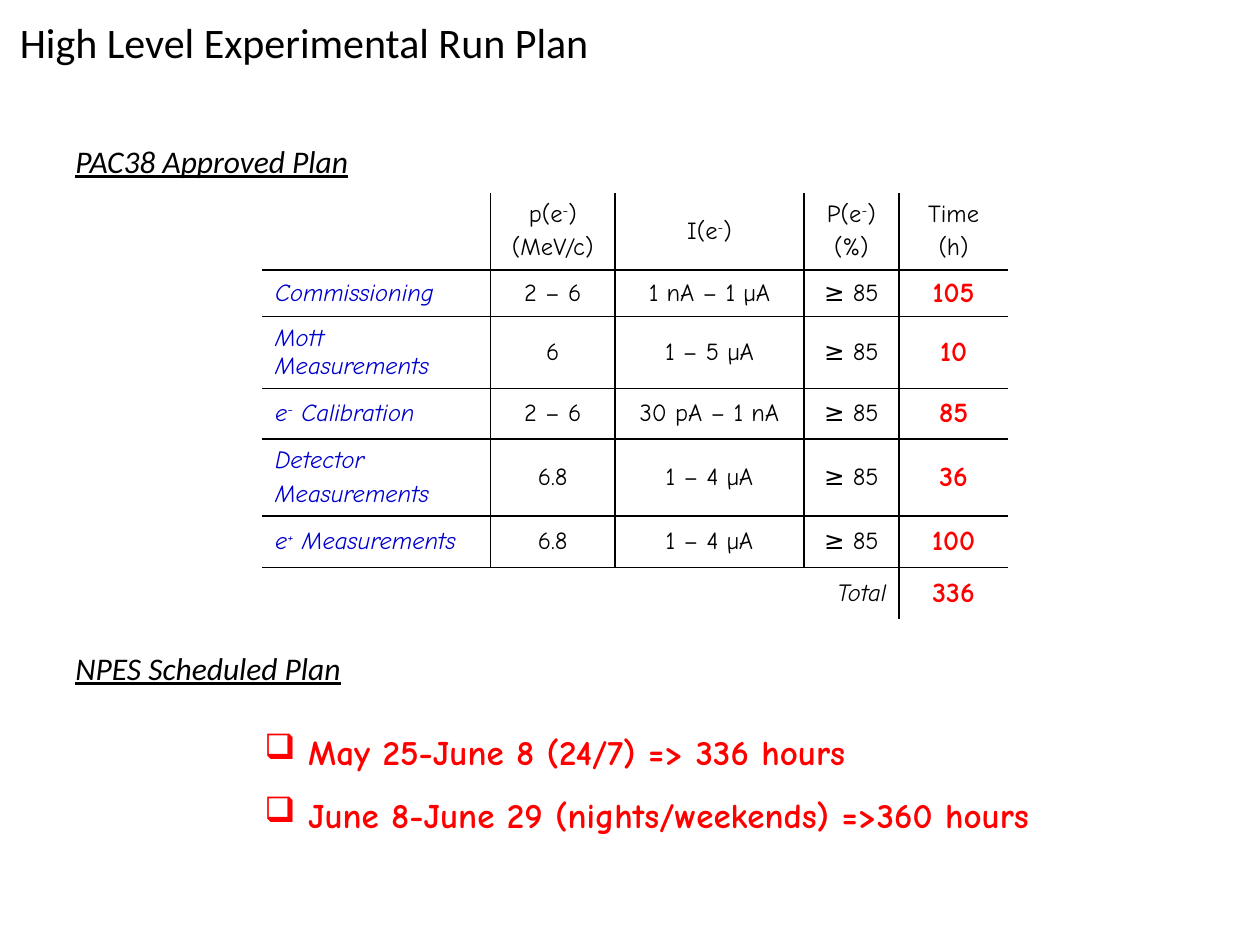
from dataclasses import dataclass

from lxml import etree
from pptx import Presentation
from pptx.dml.color import RGBColor
from pptx.enum.text import MSO_ANCHOR, MSO_AUTO_SIZE, PP_ALIGN
from pptx.oxml.ns import qn
from pptx.util import Cm, Pt

BLACK = RGBColor(0x00, 0x00, 0x00)
BLUE = RGBColor(0x00, 0x00, 0xCC)
RED = RGBColor(0xFF, 0x00, 0x00)
LEFT, CENTER, RIGHT = PP_ALIGN.LEFT, PP_ALIGN.CENTER, PP_ALIGN.RIGHT
MIDDLE = MSO_ANCHOR.MIDDLE
FIT_SHAPE = MSO_AUTO_SIZE.SHAPE_TO_FIT_TEXT


@dataclass(frozen=True)
class TextStyle:
    font: str
    size: int
    color: RGBColor = BLACK
    bold: bool = False
    italic: bool = False
    underline: bool = False
    align: PP_ALIGN = LEFT


@dataclass(frozen=True)
class Label:
    text: str
    left: float
    top: float
    width: float
    height: float
    style: TextStyle


TITLE = TextStyle("Calibri", 24)
HEADING = TextStyle("Calibri", 18, italic=True, underline=True)
VALUE = TextStyle("Comic Neue", 14, align=CENTER)
ACTIVITY = TextStyle("Comic Neue", 14, BLUE, italic=True)
HOURS = TextStyle("Comic Neue", 16, RED, bold=True, align=CENTER)
TOTAL = TextStyle("Comic Neue", 14, italic=True, align=RIGHT)
SCHEDULE = TextStyle("Comic Neue", 20, RED, bold=True)

LABELS = [
    Label("High Level Experimental Run Plan", 0.15, 0.2, 12.09, 1.3, TITLE),
    Label("PAC38 Approved Plan", 1.27, 2.74, 6.1, 1.02, HEADING),
    Label("NPES Scheduled Plan", 1.27, 12.95, 5.97, 1.02, HEADING),
]

# Text between carets is superscript; a line break starts a new paragraph
RUN_PLAN = [
    ["", "p(e^-^)\n(MeV/c)", "I(e^-^)", "P(e^-^)\n(%)", "Time\n(h)"],
    ["Commissioning", "2 – 6", "1 nA – 1 µA", "≥ 85", "105"],
    ["Mott Measurements", "6", "1 – 5 µA", "≥ 85", "10"],
    ["e^-^ Calibration", "2 – 6", "30 pA – 1 nA", "≥ 85", "85"],
    ["Detector\nMeasurements", "6.8", "1 – 4 µA", "≥ 85", "36"],
    ["e^+^ Measurements", "6.8", "1 – 4 µA", "≥ 85", "100"],
    ["Total", "", "", "", "336"],
]
COLUMN_WIDTHS = [4.6, 2.51, 3.81, 1.91, 2.21]
ROW_HEIGHTS = [1.55, 0.94, 1.45, 1.02, 1.55, 1.04, 1.04]
LAST_ROW, LAST_COLUMN = len(ROW_HEIGHTS) - 1, len(COLUMN_WIDTHS) - 1

SCHEDULE_LINES = [
    " May 25-June 8 (24/7) => 336 hours",
    " June 8-June 29 (nights/weekends) =>360 hours",
]


def write_paragraph(paragraph, text: str, style: TextStyle) -> None:
    paragraph.alignment = style.align
    for index, part in enumerate(text.split("^")):
        run = paragraph.add_run()
        run.text = part
        font = run.font
        font.name, font.size = style.font, Pt(style.size)
        font.bold, font.italic = style.bold, style.italic
        font.underline = style.underline
        font.color.rgb = style.color
        if index % 2:
            run._r.get_or_add_rPr().set("baseline", "30000")


def add_label(slide, label: Label) -> None:
    box = slide.shapes.add_textbox(
        Cm(label.left), Cm(label.top), Cm(label.width), Cm(label.height))
    box.text_frame.word_wrap = False
    box.text_frame.auto_size = FIT_SHAPE
    write_paragraph(box.text_frame.paragraphs[0], label.text, label.style)


def set_borders(cell, visible: dict[str, bool]) -> None:
    properties = cell._tc.get_or_add_tcPr()
    for side, shown in visible.items():
        line = etree.SubElement(properties, qn(f"a:ln{side}"), w=str(Pt(1)))
        if shown:
            fill = etree.SubElement(line, qn("a:solidFill"))
            etree.SubElement(fill, qn("a:srgbClr"), val=str(BLACK))
        else:
            etree.SubElement(line, qn("a:noFill"))


def cell_style(row: int, column: int) -> TextStyle:
    if row == 0:
        return VALUE
    if column == LAST_COLUMN:
        return HOURS
    if column == 0:
        return TOTAL if row == LAST_ROW else ACTIVITY
    return VALUE


def fill_cell(cell, row: int, column: int, text: str) -> None:
    total_span = row == LAST_ROW and column < LAST_COLUMN
    set_borders(cell, {
        "L": column == LAST_COLUMN or (column > 0 and not total_span),
        "R": column < LAST_COLUMN and (not total_span or column in (0, LAST_COLUMN - 1)),
        "T": row > 0,
        "B": row < LAST_ROW,
    })
    cell.fill.background()
    cell.vertical_anchor = MIDDLE
    if not text:
        return
    for index, line in enumerate(text.split("\n")):
        frame = cell.text_frame
        paragraph = frame.add_paragraph() if index else frame.paragraphs[0]
        if index:
            paragraph.space_before = Pt(2.8)
        write_paragraph(paragraph, line, cell_style(row, column))


def add_run_plan(slide) -> None:
    table = slide.shapes.add_table(
        len(ROW_HEIGHTS), len(COLUMN_WIDTHS), Cm(5.29), Cm(3.89),
        Cm(sum(COLUMN_WIDTHS)), Cm(sum(ROW_HEIGHTS))).table
    table.first_row = table.horz_banding = False
    for column, width in zip(table.columns, COLUMN_WIDTHS):
        column.width = Cm(width)
    for row, height in zip(table.rows, ROW_HEIGHTS):
        row.height = Cm(height)
    table.cell(LAST_ROW, 0).merge(table.cell(LAST_ROW, LAST_COLUMN - 1))
    for row, texts in enumerate(RUN_PLAN):
        for column, text in enumerate(texts):
            fill_cell(table.cell(row, column), row, column, text)


def add_schedule(slide) -> None:
    box = slide.shapes.add_textbox(Cm(3.81), Cm(14.17), Cm(19.25), Cm(2.82))
    frame = box.text_frame
    frame.word_wrap = True
    frame.auto_size = FIT_SHAPE
    for index, line in enumerate(SCHEDULE_LINES):
        paragraph = frame.add_paragraph() if index else frame.paragraphs[0]
        properties = paragraph._p.get_or_add_pPr()
        properties.set("marL", str(Cm(1.27)))
        properties.set("indent", "0")
        etree.SubElement(properties, qn("a:buChar"), char="❑")
        paragraph.level = 1
        paragraph.line_spacing = 1.5
        write_paragraph(paragraph, line, SCHEDULE)


def main() -> None:
    presentation = Presentation()
    presentation.slide_width, presentation.slide_height = Cm(25.4), Cm(19.05)
    slide = presentation.slides.add_slide(presentation.slide_layouts[6])

    # Approved plan table, scheduled dates, then title and headings
    add_run_plan(slide)
    add_schedule(slide)
    for label in LABELS:
        add_label(slide, label)

    presentation.save("out.pptx")


if __name__ == "__main__":
    main()
